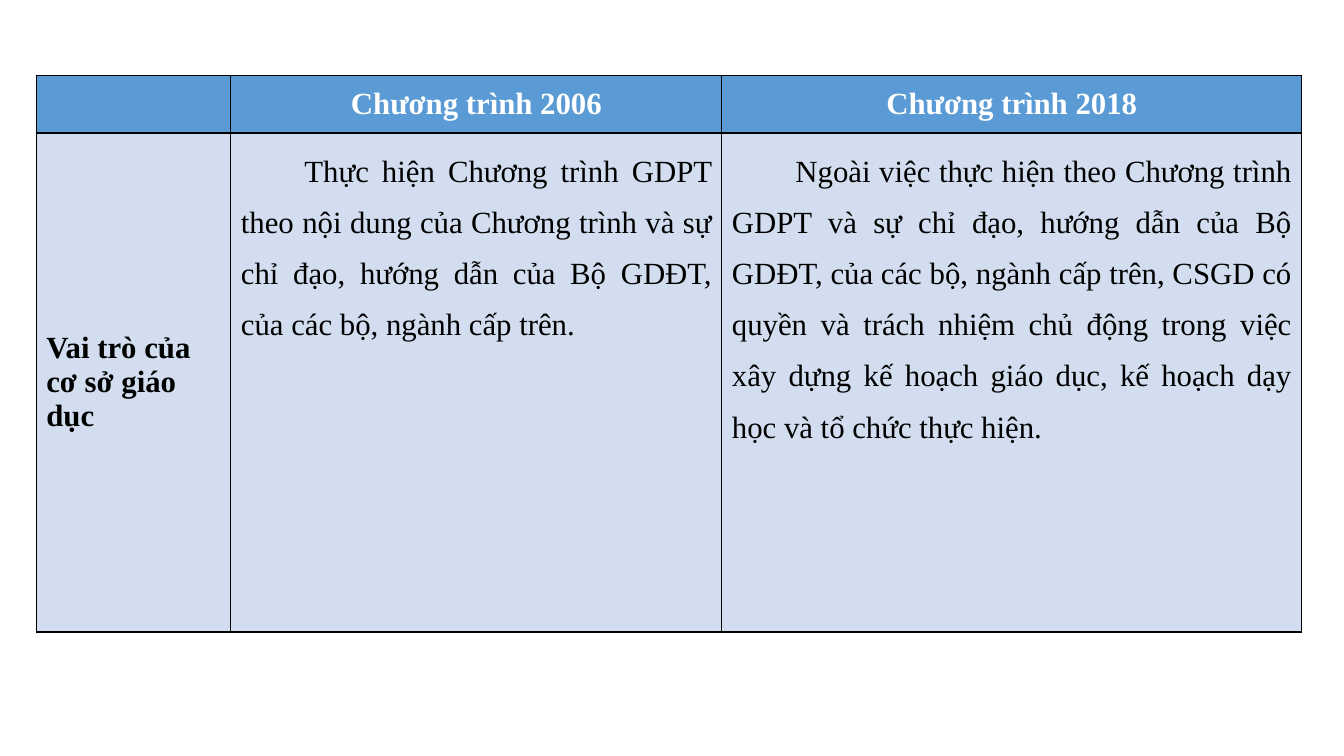
import pptx
import pptx.dml.color
import pptx.enum.text
import pptx.util
from lxml import etree
from pptx.oxml.ns import qn

Inches = pptx.util.Inches
Pt = pptx.util.Pt
Align = pptx.enum.text.PP_ALIGN
Anchor = pptx.enum.text.MSO_ANCHOR

FONT = "Times New Roman"
HEADER_FILL, BODY_FILL = "5B9BD5", "D2DEEF"
WHITE, BLACK = "FFFFFF", "000000"

COLUMN_WIDTHS = (1.93, 4.87, 5.75)
ROW_HEIGHTS = (0.57, 4.95)
HEADINGS = ("", "Chương trình 2006", "Chương trình 2018")
ROLE = "Vai trò của cơ sở giáo dục"
ROLE_2006 = (
    "Thực hiện Chương trình GDPT theo nội dung của Chương trình và sự chỉ đạo, "
    "hướng dẫn của Bộ GDĐT, của các bộ, ngành cấp trên."
)
ROLE_2018 = (
    "Ngoài việc thực hiện theo Chương trình GDPT và sự chỉ đạo, hướng dẫn của Bộ "
    "GDĐT, của các bộ, ngành cấp trên, CSGD có quyền và trách nhiệm chủ động "
    "trong việc xây dựng kế hoạch giáo dục, kế hoạch dạy học và tổ chức thực hiện."
)


def color(value):
    return pptx.dml.color.RGBColor.from_string(value)


def add_borders(cell):
    properties = cell._tc.get_or_add_tcPr()
    for position, side in enumerate(("lnL", "lnR", "lnT", "lnB")):
        border = etree.Element(qn(f"a:{side}"), w=str(Pt(1)))
        fill = etree.SubElement(border, qn("a:solidFill"))
        etree.SubElement(fill, qn("a:srgbClr"), val=BLACK)
        properties.insert(position, border)


def style_cell(cell, fill):
    cell.fill.solid()
    cell.fill.fore_color.rgb = color(fill)
    add_borders(cell)


def write_cell(cell, text, text_color, align, bold=True, anchor=Anchor.MIDDLE):
    cell.vertical_anchor = anchor
    paragraph = cell.text_frame.paragraphs[0]
    paragraph.alignment = align
    run = paragraph.add_run()
    run.text = text
    run.font.name = FONT
    run.font.size = Pt(22)
    run.font.bold = bold
    run.font.color.rgb = color(text_color)
    return paragraph


def write_description(cell, text):
    paragraph = write_cell(cell, text, BLACK, Align.JUSTIFY, False, Anchor.TOP)
    paragraph.line_spacing = 1.5
    paragraph.space_after = Pt(12)
    # First-line indent
    paragraph._p.get_or_add_pPr().set("indent", str(Inches(0.63)))


def add_comparison(slide, left, top, width, height):
    comparison = slide.shapes.add_table(
        len(ROW_HEIGHTS), len(COLUMN_WIDTHS), left, top, width, height
    ).table
    for column, share in zip(comparison.columns, COLUMN_WIDTHS):
        column.width = int(width * share / sum(COLUMN_WIDTHS))
    for row, share in zip(comparison.rows, ROW_HEIGHTS):
        row.height = int(height * share / sum(ROW_HEIGHTS))

    # Header row
    for column, heading in enumerate(HEADINGS):
        cell = comparison.cell(0, column)
        style_cell(cell, HEADER_FILL)
        if heading:
            write_cell(cell, heading, WHITE, Align.CENTER)

    # Role of the school under each programme
    for column in range(len(COLUMN_WIDTHS)):
        style_cell(comparison.cell(1, column), BODY_FILL)
    write_cell(comparison.cell(1, 0), ROLE, BLACK, Align.LEFT)
    for column, description in enumerate((ROLE_2006, ROLE_2018), start=1):
        write_description(comparison.cell(1, column), description)


def main():
    presentation = pptx.Presentation()
    presentation.slide_width = Inches(13.33)
    presentation.slide_height = Inches(7.5)
    slide = presentation.slides.add_slide(presentation.slide_layouts[6])
    add_comparison(slide, Inches(0.36), Inches(0.75), Inches(12.55), Inches(5.52))
    presentation.save("out.pptx")


if __name__ == "__main__":
    main()
